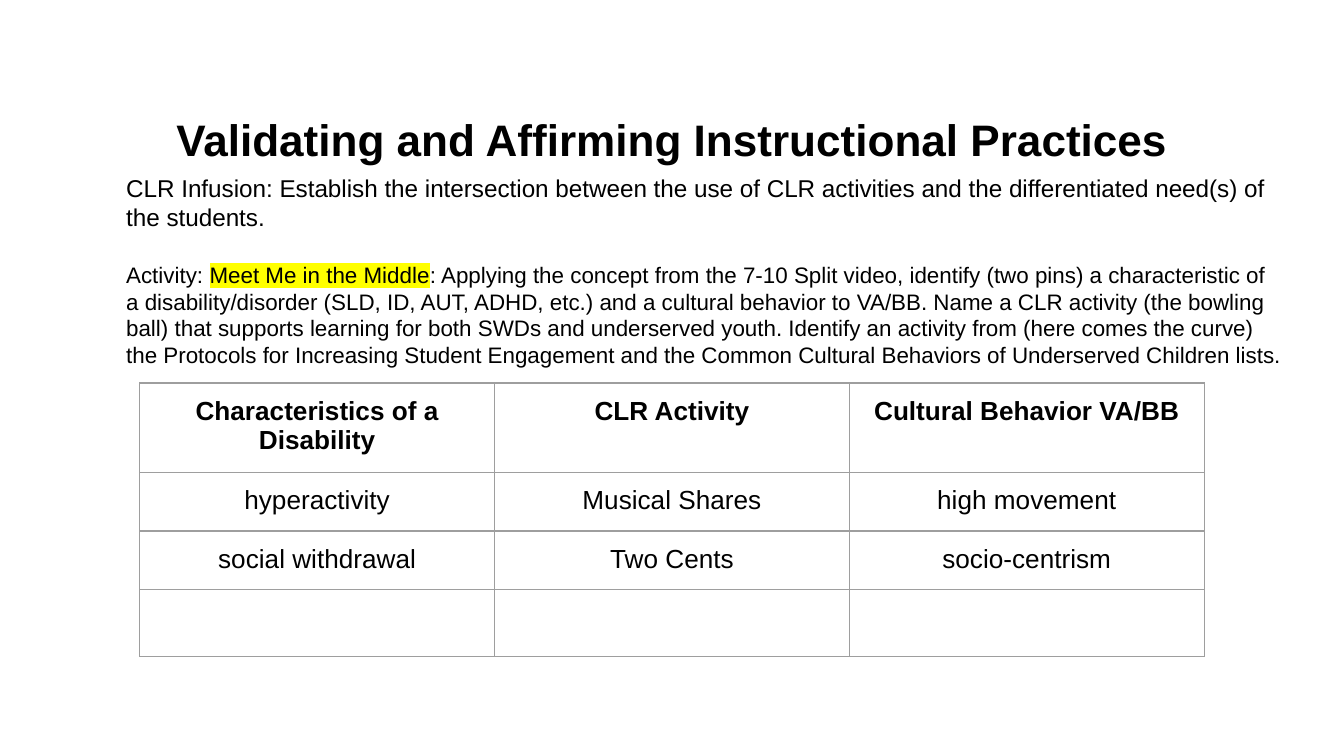
from dataclasses import dataclass, field

from lxml import etree
from pptx import Presentation
from pptx.dml.color import RGBColor
from pptx.enum.text import MSO_ANCHOR, PP_ALIGN
from pptx.oxml.ns import qn
from pptx.util import Inches, Pt

BLACK = RGBColor(0x00, 0x00, 0x00)
YELLOW = RGBColor(0xFF, 0xFF, 0x00)
GREY = RGBColor(0x9E, 0x9E, 0x9E)
CENTER, LEFT = PP_ALIGN.CENTER, PP_ALIGN.LEFT
MIDDLE, TOP = MSO_ANCHOR.MIDDLE, MSO_ANCHOR.TOP

PAGE_WIDTH = Inches(10)
PAGE_HEIGHT = PAGE_WIDTH * 9 // 16
PADDING = Inches(0.1)
BORDER_WIDTH = Pt(0.75)
FONT = "Arial"


@dataclass(frozen=True)
class Frame:
    """Position and size in percent of the page."""
    left: float
    top: float
    width: float
    height: float

    def lengths(self) -> tuple[int, int, int, int]:
        return (
            int(PAGE_WIDTH * self.left / 100),
            int(PAGE_HEIGHT * self.top / 100),
            int(PAGE_WIDTH * self.width / 100),
            int(PAGE_HEIGHT * self.height / 100),
        )


@dataclass(frozen=True)
class Span:
    text: str
    highlight: RGBColor | None = None


@dataclass(frozen=True)
class Para:
    spans: list[Span]
    size: float
    bold: bool = False
    format: dict = field(default_factory=dict)
    indent: float = 0


@dataclass(frozen=True)
class TextBlock:
    frame: Frame
    anchor: MSO_ANCHOR
    paras: list[Para]


BODY_FORMAT = {"alignment": LEFT, "line_spacing": 1.0}

BLOCKS = [
    TextBlock(Frame(3.4, 13.16, 93.2, 11.2), MIDDLE, [
        Para([Span("Validating and Affirming Instructional Practices")],
             23.6, True, {"alignment": CENTER, "line_spacing": 0.9}),
    ]),
    TextBlock(Frame(3.4, 21.16, 93.2, 70.22), TOP, [
        Para([Span("CLR Infusion: Establish the intersection between the use of CLR "
                   "activities and the differentiated need(s) of the students.")],
             13, format=BODY_FORMAT, indent=0.5),
        Para([Span("Activity: "),
              Span("Meet Me in the Middle", YELLOW),
              Span(": Applying the concept from the 7-10 Split video, identify (two pins) "
                   "a characteristic of a disability/disorder (SLD, ID, AUT, ADHD, etc.) "
                   "and a cultural behavior to VA/BB. Name a CLR activity (the bowling "
                   "ball) that supports learning for both SWDs and underserved youth. "
                   "Identify an activity from (here comes the curve) the Protocols for "
                   "Increasing Student Engagement and the Common Cultural Behaviors of "
                   "Underserved Children lists.")],
             12, format=BODY_FORMAT | {"space_before": Pt(15.6)}, indent=0.5),
    ]),
]

TABLE_FRAME = Frame(10.4, 50.67, 79.2, 29.87)
TABLE_ROWS = [
    ["Characteristics of a Disability", "CLR Activity", "Cultural Behavior VA/BB"],
    ["hyperactivity", "Musical Shares", "high movement"],
    ["social withdrawal", "Two Cents", "socio-centrism"],
    ["", "", ""],
]


def set_format(target, values: dict) -> None:
    for name, value in values.items():
        setattr(target, name, value)


def write_para(paragraph, para: Para) -> None:
    set_format(paragraph, para.format)
    if para.indent:
        properties = paragraph._p.get_or_add_pPr()
        properties.set("marL", str(Inches(para.indent)))
        properties.set("indent", "0")
    for span in para.spans:
        run = paragraph.add_run()
        run.text = span.text
        set_format(run.font, {"name": FONT, "size": Pt(para.size), "bold": para.bold})
        run.font.color.rgb = BLACK
        if span.highlight is not None:
            highlight = etree.Element(qn("a:highlight"))
            etree.SubElement(highlight, qn("a:srgbClr"), val=str(span.highlight))
            run.font._element.find(qn("a:solidFill")).addnext(highlight)


def draw_text(page, block: TextBlock) -> None:
    text_frame = page.shapes.add_textbox(*block.frame.lengths()).text_frame
    set_format(text_frame, {
        "word_wrap": True, "vertical_anchor": block.anchor,
        "margin_left": PADDING, "margin_right": PADDING,
        "margin_top": PADDING, "margin_bottom": PADDING,
    })
    for index, para in enumerate(block.paras):
        paragraph = text_frame.add_paragraph() if index else text_frame.paragraphs[0]
        write_para(paragraph, para)


def draw_borders(cell) -> None:
    properties = cell._tc.get_or_add_tcPr()
    for side in ("a:lnL", "a:lnR", "a:lnT", "a:lnB"):
        line = etree.SubElement(properties, qn(side), w=str(BORDER_WIDTH))
        fill = etree.SubElement(line, qn("a:solidFill"))
        etree.SubElement(fill, qn("a:srgbClr"), val=str(GREY))


def draw_table(page, frame: Frame, rows: list[list[str]]) -> None:
    shape = page.shapes.add_table(len(rows), len(rows[0]), *frame.lengths())
    table = shape.table
    set_format(table, {"first_row": False, "horz_banding": False})
    for row_index, texts in enumerate(rows):
        for column_index, text in enumerate(texts):
            cell = table.cell(row_index, column_index)
            set_format(cell, {
                "margin_left": PADDING, "margin_right": PADDING,
                "margin_top": PADDING, "margin_bottom": PADDING,
            })
            draw_borders(cell)
            cell.fill.background()
            if text:
                write_para(cell.text_frame.paragraphs[0],
                           Para([Span(text)], 14, row_index == 0, {"alignment": CENTER}))


def main() -> None:
    deck = Presentation()
    set_format(deck, {"slide_width": PAGE_WIDTH, "slide_height": PAGE_HEIGHT})
    page = deck.slides.add_slide(deck.slide_layouts[6])
    for block in BLOCKS:
        draw_text(page, block)
    draw_table(page, TABLE_FRAME, TABLE_ROWS)
    deck.save("out.pptx")


if __name__ == "__main__":
    main()
